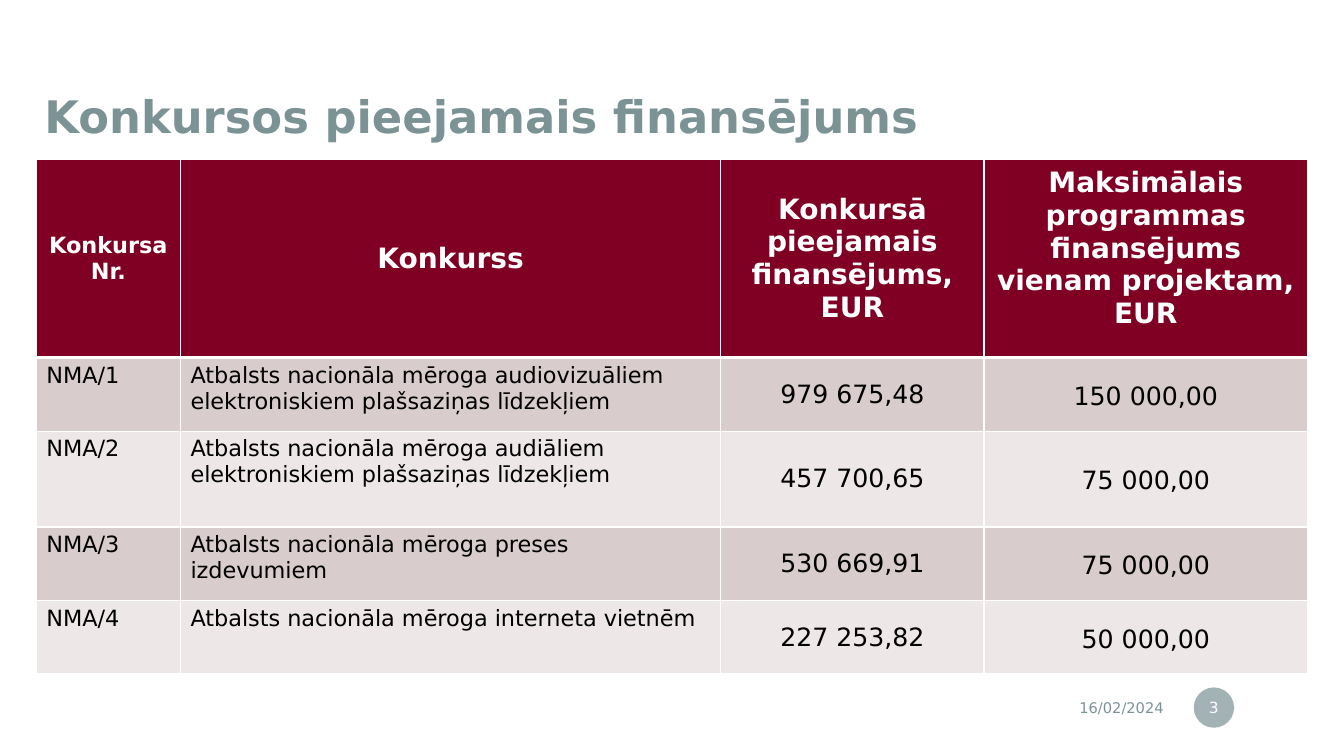
from lxml import etree
from pptx import Presentation
from pptx.dml.color import RGBColor
from pptx.enum import shapes, text
from pptx.oxml import ns
from pptx.util import Inches, Pt

# Content
TITLE = "Konkursos pieejamais finansējums"
DATE = "16/02/2024"
PAGE = "3"
HEADERS = [
    "Konkursa Nr.",
    "Konkurss",
    "Konkursā pieejamais finansējums, EUR",
    "Maksimālais programmas finansējums vienam projektam,\nEUR",
]
CONTESTS = [
    ("NMA/1", "Atbalsts nacionāla mēroga audiovizuāliem elektroniskiem plašsaziņas līdzekļiem",
     "979 675,48", "150 000,00"),
    ("NMA/2", "Atbalsts nacionāla mēroga audiāliem elektroniskiem plašsaziņas līdzekļiem",
     "457 700,65", "75 000,00"),
    ("NMA/3", "Atbalsts nacionāla mēroga preses izdevumiem",
     "530 669,91", "75 000,00"),
    ("NMA/4", "Atbalsts nacionāla mēroga interneta vietnēm",
     "227 253,82", "50 000,00"),
]
COLUMN_WIDTHS = [1.43, 5.36, 2.61, 3.21]
ROW_HEIGHTS = [1.92, 0.73, 0.95, 0.73, 0.73]

THEME = {
    "font": "DejaVu Sans",
    "accent": "7C9396", "header": "800024", "bands": ["D8CCCD", "EDE7E8"],
    "white": "FFFFFF", "black": "000000",
    "title_size": 32, "header_sizes": [16, 20, 20, 20], "body_sizes": [16, 16, 18, 18],
    "date_size": 10.5, "page_size": 11,
}
LEFT, CENTER, RIGHT = text.PP_ALIGN.LEFT, text.PP_ALIGN.CENTER, text.PP_ALIGN.RIGHT
MIDDLE, TOP = text.MSO_ANCHOR.MIDDLE, text.MSO_ANCHOR.TOP


def color(name):
    return RGBColor.from_string(name)


def write(frame, words, size, ink, align=LEFT, bold=False, spacing=None):
    frame.word_wrap = True
    frame.text = words
    for paragraph in frame.paragraphs:
        paragraph.alignment = align
        if spacing:
            paragraph.line_spacing = spacing
        font = paragraph.font
        font.name, font.size, font.bold = THEME["font"], Pt(size), bold
        font.color.rgb = color(ink)


def set_margins(frame, left, top, right, bottom):
    frame.margin_left, frame.margin_top = Inches(left), Inches(top)
    frame.margin_right, frame.margin_bottom = Inches(right), Inches(bottom)


def add_borders(cell, bottom_width):
    properties = cell._tc.get_or_add_tcPr()
    widths = {"lnL": 1, "lnR": 1, "lnT": 1, "lnB": bottom_width}
    for position, (side, width) in enumerate(widths.items()):
        line = etree.Element(ns.qn("a:" + side), w=str(Pt(width)))
        fill = etree.SubElement(line, ns.qn("a:solidFill"))
        etree.SubElement(fill, ns.qn("a:srgbClr"), val=THEME["white"])
        properties.insert(position, line)


deck = Presentation()
deck.slide_width, deck.slide_height = Inches(13.33), Inches(7.5)
slide = deck.slides.add_slide(deck.slide_layouts[6])


def add_text(left, top, width, height):
    frame = slide.shapes.add_textbox(
        Inches(left), Inches(top), Inches(width), Inches(height)).text_frame
    frame.vertical_anchor = MIDDLE
    return frame


# Title
title = add_text(0.24, 0.57, 10, 1.23)
set_margins(title, 0.2, 0.2, 0.2, 0.2)
write(title, TITLE, THEME["title_size"], THEME["accent"], bold=True, spacing=0.9)

# Date and page number
date = add_text(8.63, 6.84, 3.01, 0.35)
write(date, DATE, THEME["date_size"], THEME["accent"], RIGHT)

badge = slide.shapes.add_shape(
    shapes.MSO_SHAPE.OVAL, Inches(11.84), Inches(6.82), Inches(0.4), Inches(0.4))
badge.shadow.inherit = False
badge.line.fill.background()
badge.fill.solid()
badge.fill.fore_color.rgb = color(THEME["accent"])
badge_color = badge._element.spPr.find(".//" + ns.qn("a:srgbClr"))
etree.SubElement(badge_color, ns.qn("a:alpha"), val="70000")
badge.text_frame.vertical_anchor = MIDDLE
set_margins(badge.text_frame, 0.02, 0.05, 0.02, 0.05)
write(badge.text_frame, PAGE, THEME["page_size"], THEME["white"], CENTER)

# Funding table
funding = slide.shapes.add_table(
    len(ROW_HEIGHTS), len(COLUMN_WIDTHS), Inches(0.36), Inches(1.58),
    Inches(sum(COLUMN_WIDTHS)), Inches(sum(ROW_HEIGHTS))).table
funding.horz_banding = False
for column, width in zip(funding.columns, COLUMN_WIDTHS):
    column.width = Inches(width)
for row, height in zip(funding.rows, ROW_HEIGHTS):
    row.height = Inches(height)

for r, entries in enumerate([HEADERS] + CONTESTS):
    is_header = r == 0
    sizes = THEME["header_sizes"] if is_header else THEME["body_sizes"]
    for c, words in enumerate(entries):
        cell = funding.cell(r, c)
        is_centered = is_header or c >= 2
        is_maximum = c == 3
        cell.vertical_anchor = MIDDLE if is_centered else TOP
        if is_maximum and is_header:
            cell.margin_bottom = Inches(0.25)
        elif is_maximum:
            set_margins(cell, 0.07, 0, 0.07, 0)
        write(cell.text_frame, words, sizes[c],
              THEME["white"] if is_header else THEME["black"],
              CENTER if is_centered else LEFT, bold=is_header,
              spacing=1.15 if is_maximum and not is_header else None)
        cell.fill.solid()
        cell.fill.fore_color.rgb = color(
            THEME["header"] if is_header else THEME["bands"][(r - 1) % 2])
        add_borders(cell, bottom_width=3 if is_header else 1)

deck.save("out.pptx")
